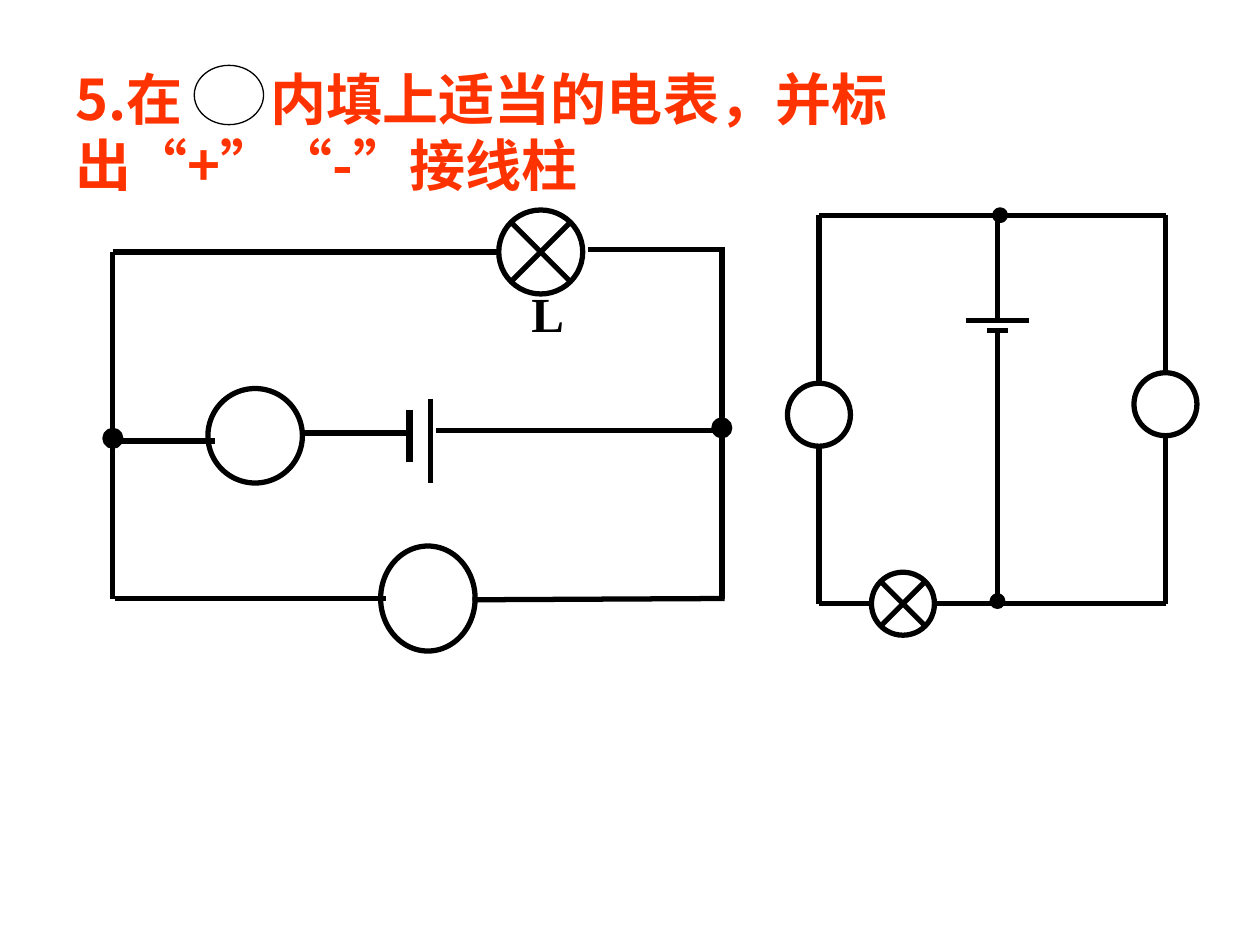
from lxml import etree
from pptx import Presentation, util as u
from pptx.dml.color import RGBColor
from pptx.enum import lang, shapes, text
from pptx.oxml.ns import qn

RED = RGBColor(0xFF, 0x33, 0x00)
BLACK = RGBColor(0, 0, 0)
SANS, SERIF = "Noto Sans CJK SC", "Times New Roman"
CELLS_PER_INCH = 24
OVAL = shapes.MSO_SHAPE.OVAL
JUNCTION = shapes.MSO_SHAPE.FLOWCHART_SUMMING_JUNCTION

QUESTION = [
    ("5.在\t内填上适当的电表，并标出", SANS), ("“", SERIF), ("+", SANS),
    ("”“", SERIF), ("-", SANS), ("”", SERIF), ("接线柱", SANS),
]
LEFT_WIRES = [
    (21.5, 48, 95.5, 48), (112, 47.5, 138, 47.5),
    (21.5, 48, 21.5, 114), (137.5, 48, 137.5, 114),
    (21, 84, 41, 84), (57.4, 82.5, 77.5, 82.5), (83, 82, 136, 82),
    (22, 114, 73.5, 114), (90, 114.25, 138, 114),
]
RIGHT_WIRES = [
    (156, 41, 222, 41), (156, 41, 156, 73), (156, 85, 156, 115),
    (222, 41, 222, 71), (222, 83, 222, 115),
    (190, 41, 190, 61), (190, 63, 190, 115),
    (156, 115, 166, 115), (178, 115, 222, 115),
]
RIGHT_CELL = [(184, 61, 196, 61), (188, 63, 192, 63)]
LAMP_CROSS = [(176, 111, 168, 119), (168, 111, 176, 119)]
METERS = [(61.1 - 12.5, 83, 18, 18), (81.5, 114, 18, 20), (156, 79, 12, 12), (222, 77, 12, 12)]
NODES = [(21.5, 83.5, 3), (137.5, 81.5, 3), (190, 114.5, 2), (190.5, 41, 2)]


def grid(cells):
    """Turn grid cells into a length."""
    return u.Inches(cells / CELLS_PER_INCH)


def add_span(para, words, font, size, color):
    """Add one bold run with matching East Asian font."""
    span = para.add_run()
    span.text = words
    span.font.name, span.font.size, span.font.bold = font, u.Pt(size), True
    span.font.color.rgb = color
    span.font.language_id = lang.MSO_LANGUAGE_ID.SIMPLIFIED_CHINESE
    etree.SubElement(span.font._element, qn("a:ea"), typeface=SANS)


def add_question(page):
    """Write the question in the title placeholder, with a tab for the blank."""
    box = page.shapes.title
    box.left, box.top, box.width, box.height = map(u.Inches, (0.5, 0.42, 8, 1.17))
    frame = box.text_frame
    frame.word_wrap, frame.auto_size = True, text.MSO_AUTO_SIZE.NONE
    frame.vertical_anchor = text.MSO_ANCHOR.TOP
    frame.margin_top = u.Inches(0.1)
    para = frame.paragraphs[0]
    para.alignment = text.PP_ALIGN.LEFT
    para.line_spacing, para.space_before = u.Pt(37.7), u.Pt(0)
    tabs = etree.SubElement(para._p.get_or_add_pPr(), qn("a:tabLst"))
    etree.SubElement(tabs, qn("a:tab"), pos=str(u.Inches(1.55)), algn="l")
    for words, font in QUESTION:
        add_span(para, words, font, 32, RED)


def add_wire(page, x1, y1, x2, y2, weight=3):
    """Draw a straight black line between two grid points."""
    wire = page.shapes.add_connector(
        shapes.MSO_CONNECTOR.STRAIGHT, grid(x1), grid(y1), grid(x2), grid(y2))
    wire.line.color.rgb, wire.line.width = BLACK, u.Pt(weight)
    etree.SubElement(wire._element.spPr, qn("a:effectLst"))


def add_symbol(page, x, y, width, height, kind=OVAL, weight=3, filled=False):
    """Draw a round circuit symbol about its centre."""
    symbol = page.shapes.add_shape(
        kind, grid(x - width / 2), grid(y - height / 2), grid(width), grid(height))
    symbol.shadow.inherit = False
    symbol.line.color.rgb, symbol.line.width = BLACK, u.Pt(weight)
    if filled:
        symbol.fill.solid()
        symbol.fill.fore_color.rgb = BLACK
    else:
        symbol.fill.background()


def add_lamp_label(page):
    """Name the lamp of the left circuit."""
    box = page.shapes.add_textbox(*map(u.Inches, (4.12, 2.2, 0.46, 0.57)))
    box.text_frame.word_wrap = False
    add_span(box.text_frame.paragraphs[0], "L", SERIF, 28, BLACK)


def main():
    """Build the circuit exercise slide."""
    deck = Presentation()
    deck.slide_width, deck.slide_height = u.Inches(10), u.Inches(7.5)
    page = deck.slides.add_slide(deck.slide_layouts[5])
    add_question(page)
    add_symbol(page, 43.6, 18.1, 13.2, 11.3, weight=0.75)
    for wire in LEFT_WIRES + RIGHT_WIRES + RIGHT_CELL + LAMP_CROSS:
        add_wire(page, *wire)
    add_wire(page, 78, 78, 78, 88, weight=4.5)
    add_wire(page, 82, 76, 82, 92)
    for meter in METERS:
        add_symbol(page, *meter)
    add_symbol(page, 103, 48, 16, 16, kind=JUNCTION)
    add_symbol(page, 172, 115, 12, 12)
    for x, y, size in NODES:
        add_symbol(page, x, y, size, size, filled=True)
    add_lamp_label(page)
    deck.save("out.pptx")


if __name__ == "__main__":
    main()
